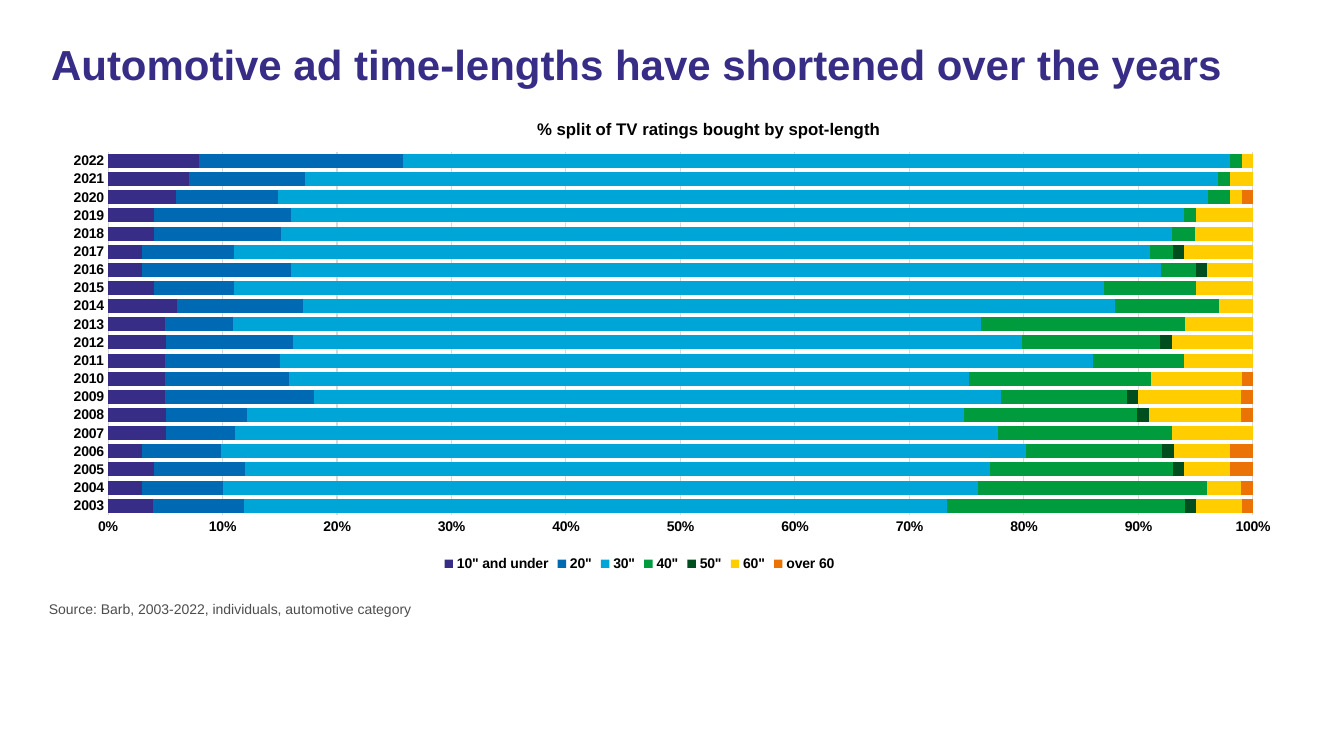
"""Build the slide on automotive ad time-lengths from 2003 to 2022."""
from lxml.etree import SubElement, Element
from pptx import Presentation
from pptx.chart.data import CategoryChartData
from pptx.dml.color import RGBColor
from pptx.enum.chart import XL_CHART_TYPE as ChartType, XL_LEGEND_POSITION as LegendPosition
from pptx.enum.chart import XL_TICK_MARK as TickMark
from pptx.enum.text import MSO_ANCHOR as Anchor, PP_ALIGN as Align
from pptx.oxml.ns import qn
from pptx.util import Pt

PX = 914400 / 100.8
COLORS = {"title": "372D87", "text": "000000", "source": "4D4D4D", "grid": "D9D9D9"}
CHART_LEFT, CHART_TOP, CHART_WIDTH, CHART_HEIGHT = 48, 100, 1247, 476
SPOT_LENGTHS = [
    ('10" and under', "372D87", [4, 3, 4, 3, 5, 5, 5, 5, 5, 5, 5, 6, 4, 3, 3, 4, 4, 6, 7, 8]),
    ('20"', "0069B4", [8, 7, 8, 7, 6, 7, 13, 11, 10, 11, 6, 11, 7, 13, 8, 11, 12, 9, 10, 18]),
    ('30"', "00A5D7", [62, 66, 65, 71, 66, 62, 60, 60, 71, 63, 66, 71, 76, 76, 80, 77, 78, 82, 79, 73]),
    ('40"', "009B3C", [21, 20, 16, 12, 15, 15, 11, 16, 8, 12, 18, 9, 8, 3, 2, 2, 1, 2, 1, 1]),
    ('50"', "004E1E", [1, 0, 1, 1, 0, 1, 1, 0, 0, 1, 0, 0, 0, 1, 1, 0, 0, 0, 0, 0]),
    ('60"', "FFCD00", [4, 3, 4, 5, 7, 8, 9, 8, 6, 7, 6, 3, 5, 4, 6, 5, 5, 1, 2, 1]),
    ("over 60", "EB7305", [1, 1, 2, 2, 0, 1, 1, 1, 0, 0, 0, 0, 0, 0, 0, 0, 0, 1, 0, 0]),
]


def style(font, size, color, bold):
    font.name, font.size, font.bold = "Arial", Pt(size), bold
    font.color.rgb = RGBColor.from_string(COLORS[color])


def place(part, index, left, top, width=None, height=None):
    for old in part.findall(qn("c:layout")):
        part.remove(old)
    layout = Element(qn("c:layout"))
    manual = SubElement(layout, qn("c:manualLayout"))
    settings = [("xMode", "edge"), ("yMode", "edge"),
                ("x", (left - CHART_LEFT) / CHART_WIDTH), ("y", (top - CHART_TOP) / CHART_HEIGHT)]
    if width:
        settings = [("layoutTarget", "inner"), *settings,
                    ("w", width / CHART_WIDTH), ("h", height / CHART_HEIGHT)]
    for tag, value in settings:
        SubElement(manual, qn(f"c:{tag}")).set("val", str(value))
    part.insert(index, layout)


deck = Presentation()
deck.slide_width, deck.slide_height = round(1344 * PX), round(756 * PX)
page = deck.slides.add_slide(deck.slide_layouts[5])

title = page.shapes.title
source = page.shapes.add_textbox(0, 0, 0, 0)
for box, text, area, size, color, bold in [
    (title, "Automotive ad time-lengths have shortened over the years", (41, 39, 1250, 113), 30, "title", True),
    (source, "Source: Barb, 2003-2022, individuals, automotive category", (39, 596, 1250, 33), 10, "source", False),
]:
    box.left, box.top, box.width, box.height = [round(length * PX) for length in area]
    frame = box.text_frame
    frame.text = text
    frame.word_wrap = True
    frame.vertical_anchor = Anchor.TOP
    para = frame.paragraphs[0]
    para.alignment = Align.LEFT
    style(para.runs[0].font, size, color, bold)
title.text_frame.paragraphs[0].line_spacing = 0.9

data = CategoryChartData(number_format="0")
data.categories = [str(year) for year in range(2003, 2023)]
for name, color, shares in SPOT_LENGTHS:
    data.add_series(name, shares)
chart_area = [round(length * PX) for length in (CHART_LEFT, CHART_TOP, CHART_WIDTH, CHART_HEIGHT)]
chart = page.shapes.add_chart(ChartType.BAR_STACKED_100, *chart_area, data).chart
style(chart.font, 10, "text", True)

plot = chart.plots[0]
plot.gap_width, plot.overlap = 30, 100
plot.vary_by_categories = False
for series, (name, color, shares) in zip(plot.series, SPOT_LENGTHS):
    series.format.fill.solid()
    series.format.fill.fore_color.rgb = RGBColor.from_string(color)
    series.invert_if_negative = False

years, percent = chart.category_axis, chart.value_axis
for axis in (years, percent):
    axis.major_tick_mark = axis.minor_tick_mark = TickMark.NONE
    style(axis.tick_labels.font, 10, "text", True)
percent.minimum_scale, percent.maximum_scale, percent.major_unit = 0, 1, 0.1
percent.tick_labels.number_format = "0%"
percent.tick_labels.number_format_is_linked = False
percent.has_major_gridlines = True
percent.format.line.fill.background()
for line in (years.format.line, percent.major_gridlines.format.line):
    line.color.rgb = RGBColor.from_string(COLORS["grid"])
    line.width = Pt(0.75)

chart.has_title = True
heading = chart.chart_title
heading.text_frame.text = "% split of TV ratings bought by spot-length"
style(heading.text_frame.paragraphs[0].runs[0].font, 12, "text", True)
heading.include_in_layout = False
chart.has_legend = True
chart.legend.position = LegendPosition.BOTTOM
chart.legend.include_in_layout = False
style(chart.legend.font, 10, "text", True)

body = chart.element.find(qn("c:chart"))
place(body.find(qn("c:title")), 1, 534, 116)
place(body.find(qn("c:plotArea")), 0, 108, 152, 1145, 363)
place(body.find(qn("c:legend")), 1, 440, 552)

deck.save("out.pptx")
